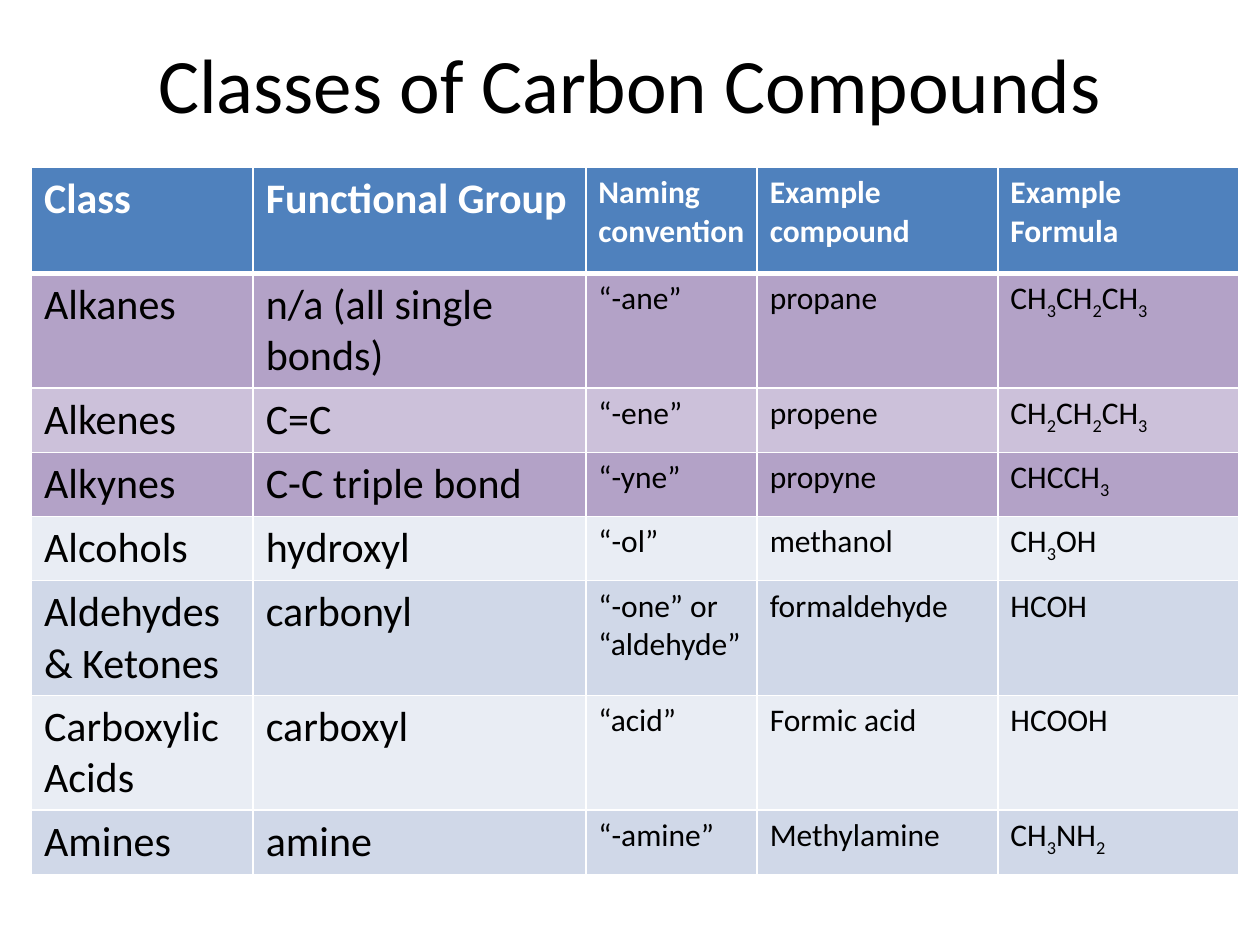
import itertools

import lxml.etree
import pptx
import pptx.enum.text
import pptx.oxml.ns
import pptx.util
from pptx.dml.color import RGBColor
from pptx.util import Inches

FONT = "Calibri"
COLORS = {
    "white": "FFFFFF",
    "black": "000000",
    "header": "4F81BD",
    "purple": "B3A2C7",
    "light_purple": "CCC1DA",
    "pale_blue": "E9EDF4",
    "light_blue": "D0D8E8",
}
COLUMN_WIDTHS = [1.76, 2.64, 1.36, 1.91, 1.91]
COLUMN_SIZES = [24, 24, 18, 18, 18]
COMPOUND_ROWS = [
    (0.84, "header", ["Class", "Functional Group", "Naming convention",
                      "Example compound", "Example Formula"]),
    (0.91, "purple", ["Alkanes", "n/a (all single bonds)", "“-ane”",
                      "propane", "CH3CH2CH3"]),
    (0.51, "light_purple", ["Alkenes", "C=C", "“-ene”",
                            "propene", "CH2CH2CH3"]),
    (0.51, "purple", ["Alkynes", "C-C triple bond", "“-yne”",
                      "propyne", "CHCCH3"]),
    (0.51, "pale_blue", ["Alcohols", "hydroxyl", "“-ol”",
                         "methanol", "CH3OH"]),
    (0.91, "light_blue", ["Aldehydes & Ketones", "carbonyl",
                          "“-one” or “aldehyde”", "formaldehyde", "HCOH"]),
    (0.91, "pale_blue", ["Carboxylic Acids", "carboxyl", "“acid”",
                         "Formic acid", "HCOOH"]),
    (0.51, "light_blue", ["Amines", "amine", "“-amine”",
                          "Methylamine", "CH3NH2"]),
]


def add_run(paragraph, text, size, color, bold=False, subscript=False):
    run = paragraph.add_run()
    run.text = text
    run.font.name = FONT
    run.font.size = pptx.util.Pt(size)
    run.font.bold = bold
    run.font.color.rgb = RGBColor.from_string(COLORS[color])
    if subscript:
        run.font._element.set("baseline", "-25000")


def set_borders(cell, bottom_width):
    properties = cell._tc.get_or_add_tcPr()
    for side, width in (("L", 1), ("R", 1), ("T", 1), ("B", bottom_width)):
        line = lxml.etree.SubElement(
            properties, pptx.oxml.ns.qn(f"a:ln{side}"), w=str(pptx.util.Pt(width)))
        fill = lxml.etree.SubElement(line, pptx.oxml.ns.qn("a:solidFill"))
        lxml.etree.SubElement(
            fill, pptx.oxml.ns.qn("a:srgbClr"), val=COLORS["white"])


def add_title(slide, left, top, width, height):
    shape = slide.shapes.add_textbox(
        Inches(left), Inches(top), Inches(width), Inches(height))
    frame = shape.text_frame
    frame.word_wrap = True
    frame.vertical_anchor = pptx.enum.text.MSO_ANCHOR.MIDDLE
    paragraph = frame.paragraphs[0]
    paragraph.alignment = pptx.enum.text.PP_ALIGN.CENTER
    add_run(paragraph, "Classes of Carbon Compounds", 44, "black")


def add_compound_table(slide, left, top, width, height):
    table = slide.shapes.add_table(
        len(COMPOUND_ROWS), len(COLUMN_WIDTHS),
        Inches(left), Inches(top), Inches(width), Inches(height)).table
    for column, share in zip(table.columns, COLUMN_WIDTHS):
        column.width = Inches(width * share / sum(COLUMN_WIDTHS))
    total_height = sum(row_height for row_height, _, _ in COMPOUND_ROWS)
    for row_index, (row_height, fill, texts) in enumerate(COMPOUND_ROWS):
        table.rows[row_index].height = Inches(height * row_height / total_height)
        is_header = row_index == 0
        color = "white" if is_header else "black"
        for column_index, text in enumerate(texts):
            cell = table.cell(row_index, column_index)
            set_borders(cell, 3 if is_header else 1)
            cell.fill.solid()
            cell.fill.fore_color.rgb = RGBColor.from_string(COLORS[fill])
            paragraph = cell.text_frame.paragraphs[0]
            for is_digit, letters in itertools.groupby(text, str.isdigit):
                add_run(paragraph, "".join(letters), COLUMN_SIZES[column_index],
                        color, is_header, is_digit)


def main():
    presentation = pptx.Presentation()
    presentation.slide_width = Inches(10)
    presentation.slide_height = Inches(7.5)
    slide = presentation.slides.add_slide(presentation.slide_layouts[6])
    add_title(slide, 0.5, 0.17, 9, 0.97)
    add_compound_table(slide, 0.25, 1.33, 9.58, 5.61)
    presentation.save("out.pptx")


if __name__ == "__main__":
    main()
